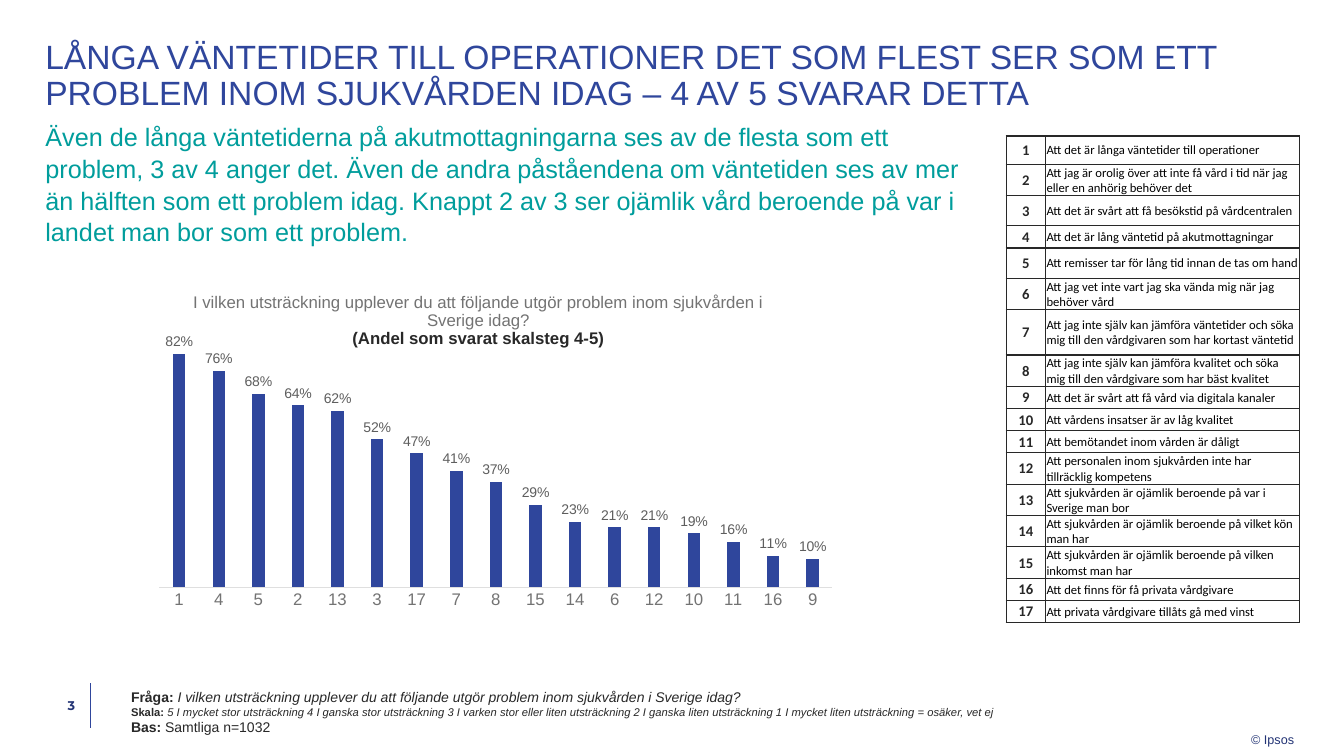
from lxml import etree
from pptx import Presentation
from pptx.chart.data import CategoryChartData
from pptx.dml.color import RGBColor
from pptx.enum.chart import XL_CHART_TYPE, XL_LABEL_POSITION, XL_TICK_MARK
from pptx.enum.shapes import MSO_CONNECTOR
from pptx.enum.text import MSO_ANCHOR, MSO_AUTO_SIZE, PP_ALIGN
from pptx.oxml import parse_xml
from pptx.oxml.ns import nsdecls, qn
from pptx.util import Inches, Pt

COLUMN = XL_CHART_TYPE.COLUMN_CLUSTERED
OUTSIDE = XL_LABEL_POSITION.OUTSIDE_END
NO_TICK = XL_TICK_MARK.NONE
STRAIGHT = MSO_CONNECTOR.STRAIGHT
TOP, MIDDLE, BOTTOM = MSO_ANCHOR.TOP, MSO_ANCHOR.MIDDLE, MSO_ANCHOR.BOTTOM
GROW = MSO_AUTO_SIZE.SHAPE_TO_FIT_TEXT
LEFT, CENTER, RIGHT = PP_ALIGN.LEFT, PP_ALIGN.CENTER, PP_ALIGN.RIGHT

BLUE, NAVY, TEAL, DARK = "2F469C", "233475", "009D9C", "282828"
GREY, LABEL, PALE, BLACK = "737373", "5E5E5E", "DFDFDF", "000000"

TITLE = ("LÅNGA VÄNTETIDER TILL OPERATIONER DET SOM FLEST SER SOM ETT PROBLEM "
         "INOM SJUKVÅRDEN IDAG – 4 AV 5 SVARAR DETTA")
LEAD = ("Även de långa väntetiderna på akutmottagningarna ses av de flesta som ett "
        "problem, 3 av 4 anger det. Även de andra påståendena om väntetiden ses av "
        "mer än hälften som ett problem idag. Knappt 2 av 3 ser ojämlik vård "
        "beroende på var i landet man bor som ett problem.")
ASK = ("I vilken utsträckning upplever du att följande utgör problem inom "
       "sjukvården i Sverige idag?")
SHARE = "(Andel som svarat skalsteg 4-5)"

# Footer lines: label, text, size, italic text
NOTES = [
    ("Fråga: ", ASK, 10, True),
    ("Skala:", " 5 I mycket stor utsträckning 4 I ganska stor utsträckning "
     "3 I varken stor eller liten utsträckning 2 I ganska liten utsträckning "
     "1 I mycket liten utsträckning = osäker, vet ej", 8, True),
    ("Bas: ", "Samtliga n=1032", 10, False),
]

# Statement number and share of answers, in falling order
SHARES = [(1, 82), (4, 76), (5, 68), (2, 64), (13, 62), (3, 52), (17, 47),
          (7, 41), (8, 37), (15, 29), (14, 23), (6, 21), (12, 21), (10, 19),
          (11, 16), (16, 11), (9, 10)]

# Statement and row height
ITEMS = [
    ("Att det är långa väntetider till operationer", 0.28),
    ("Att jag är orolig över att inte få vård i tid när jag eller en anhörig "
     "behöver det", 0.31),
    ("Att det är svårt att få besökstid på vårdcentralen", 0.3),
    ("Att det är lång väntetid på akutmottagningar", 0.22),
    ("Att remisser tar för lång tid innan de tas om hand", 0.3),
    ("Att jag vet inte vart jag ska vända mig när jag behöver vård", 0.3),
    ("Att jag inte själv kan jämföra väntetider och söka mig till den "
     "vårdgivaren som har kortast väntetid", 0.45),
    ("Att jag inte själv kan jämföra kvalitet och söka mig till den vårdgivare "
     "som har bäst kvalitet", 0.3),
    ("Att det är svårt att få vård via digitala kanaler", 0.22),
    ("Att vårdens insatser är av låg kvalitet", 0.22),
    ("Att bemötandet inom vården är dåligt", 0.22),
    ("Att personalen inom sjukvården inte har tillräcklig kompetens", 0.3),
    ("Att sjukvården är ojämlik beroende på var i Sverige man bor", 0.3),
    ("Att sjukvården är ojämlik beroende på vilket kön man har", 0.3),
    ("Att sjukvården är ojämlik beroende på vilken inkomst man har", 0.3),
    ("Att det finns för få privata vårdgivare", 0.22),
    ("Att privata vårdgivare tillåts gå med vinst", 0.22),
]


def paint(code):
    return RGBColor.from_string(code)


def style(font, size, color, name="Arial", bold=False, italic=False):
    font.name, font.size = name, Pt(size)
    font.bold, font.italic = bold, italic
    font.color.rgb = paint(color)


def add_box(slide, at, pads=(0, 0, 0, 0), anchor=TOP, wrap=True, grow=False):
    box = slide.shapes.add_textbox(*map(Inches, at))
    frame = box.text_frame
    frame.word_wrap = wrap
    frame.vertical_anchor = anchor
    frame.margin_left, frame.margin_top, frame.margin_right, frame.margin_bottom = map(
        Inches, pads)
    if grow:
        frame.auto_size = GROW
    return frame


def add_text(slide, at, text, size, color, align=LEFT, lead=None,
             name="Arial", bold=False, **frame_args):
    frame = add_box(slide, at, **frame_args)
    frame.text = text
    para = frame.paragraphs[0]
    para.alignment = align
    para.line_spacing = lead
    style(para.runs[0].font, size, color, name, bold)


def add_notes(slide, at):
    frame = add_box(slide, at, wrap=False, grow=True)
    for index, (label, text, size, slant) in enumerate(NOTES):
        para = frame.add_paragraph() if index else frame.paragraphs[0]
        para.text = label
        style(para.runs[0].font, size, DARK, bold=True)
        run = para.add_run()
        run.text = text
        style(run.font, size, DARK, italic=slant)


def add_rule(slide, left, top, end):
    rule = slide.shapes.add_connector(
        STRAIGHT, Inches(left), Inches(top), Inches(left), Inches(end))
    rule.line.color.rgb = paint(BLUE)
    rule.line.width = Pt(0.5)
    etree.SubElement(rule.element.spPr, qn("a:effectLst"))


def set_layout(parent, index, **marks):
    """Give a chart part a fixed place, as shares of the chart."""
    for old in parent.findall(qn("c:layout")):
        parent.remove(old)
    body = "".join(f'<c:{key} val="{val}"/>' for key, val in marks.items())
    parent.insert(index, parse_xml(
        f'<c:layout {nsdecls("c")}><c:manualLayout>{body}</c:manualLayout></c:layout>'))


def add_bars(slide, at):
    data = CategoryChartData(number_format="0%")
    data.categories = [str(number) for number, _ in SHARES]
    data.add_series("Series 1", [share / 100 for _, share in SHARES])
    chart = slide.shapes.add_chart(COLUMN, *map(Inches, at), data).chart
    style(chart.font, 10, DARK)
    chart.has_legend = False

    # Heading of the chart
    head = chart.chart_title.text_frame
    head.text = ASK
    style(head.paragraphs[0].runs[0].font, 12, GREY)
    para = head.add_paragraph()
    para.text = SHARE
    style(para.runs[0].font, 12, DARK, bold=True)
    set_layout(chart._chartSpace.xpath("c:chart/c:title")[0], 1,
               xMode="edge", yMode="edge", x=0.1, y=0.17)
    set_layout(chart._chartSpace.xpath("c:chart/c:plotArea")[0], 0,
               layoutTarget="inner", xMode="edge", yMode="edge",
               x=0.058, y=0.265, w=0.921, h=0.572)

    # Axes
    scale = chart.value_axis
    scale.minimum_scale, scale.maximum_scale = 0, 0.9
    scale.has_major_gridlines = False
    scale.visible = False
    base = chart.category_axis
    base.major_tick_mark = base.minor_tick_mark = NO_TICK
    base.format.line.color.rgb = paint(PALE)
    base.format.line.width = Pt(0.75)
    style(base.tick_labels.font, 12, GREY)

    # Bars and labels
    plot = chart.plots[0]
    plot.vary_by_categories = False
    plot.gap_width, plot.overlap = 219, -27
    fill = plot.series[0].format.fill
    fill.solid()
    fill.fore_color.rgb = paint(BLUE)
    plot.has_data_labels = True
    labels = plot.data_labels
    labels.show_value = True
    labels.position = OUTSIDE
    labels.number_format, labels.number_format_is_linked = "0%", False
    style(labels.font, 10, LABEL)


def fill_cell(cell, text, size, color, align, bold):
    cell.text = text
    cell.vertical_anchor = MIDDLE
    cell.margin_left = cell.margin_top = cell.margin_right = Inches(0.01)
    cell.margin_bottom = 0
    para = cell.text_frame.paragraphs[0]
    para.alignment = align
    style(para.runs[0].font, size, color, "Calibri", bold)
    cell.fill.background()
    props = cell._tc.get_or_add_tcPr()
    for index, side in enumerate("LRTB"):
        props.insert(index, parse_xml(
            f'<a:ln{side} {nsdecls("a")} w="{Pt(1)}"><a:solidFill>'
            f'<a:srgbClr val="{DARK}"/></a:solidFill></a:ln{side}>'))


def add_key(slide, at):
    table = slide.shapes.add_table(len(ITEMS), 2, *map(Inches, at)).table
    table.first_row = table.horz_banding = False
    for column, width in zip(table.columns, (0.39, 2.52)):
        column.width = Inches(width)
    for index, (text, height) in enumerate(ITEMS):
        table.rows[index].height = Inches(height)
        fill_cell(table.cell(index, 0), str(index + 1), 10.5, DARK, CENTER, True)
        fill_cell(table.cell(index, 1), text, 9, BLACK, LEFT, False)


def main():
    deck = Presentation()
    deck.slide_width, deck.slide_height = Inches(13.33), Inches(7.5)
    slide = deck.slides.add_slide(deck.slide_layouts[6])

    # Heading and lead
    add_text(slide, (0.45, 0.4, 12.44, 0.42), TITLE, 24, BLUE, lead=0.9)
    add_text(slide, (0.45, 2.11, 9.11, 0.38), LEAD, 18, TEAL, lead=1.05,
             pads=(0, 0.04, 0, 0.04), anchor=BOTTOM)

    # Chart and its key
    add_bars(slide, (1.16, 2.11, 7.25, 4.44))
    add_key(slide, (9.98, 1.35, 2.91, 4.79))

    # Footer
    add_rule(slide, 0.9, 6.78, 7.22)
    add_text(slide, (0.45, 6.78, 0.45, 0.43), "3 ", 9, NAVY, align=RIGHT,
             name="Montserrat", bold=True, pads=(0, 0, 0.12, 0), anchor=MIDDLE)
    add_notes(slide, (1.3, 6.83, 8.67, 0.47))
    add_text(slide, (12.41, 7.22, 0.43, 0.19), "© Ipsos", 9, NAVY,
             pads=(0, 0.04, 0, 0), wrap=False, grow=True)

    deck.save("out.pptx")


if __name__ == "__main__":
    main()
